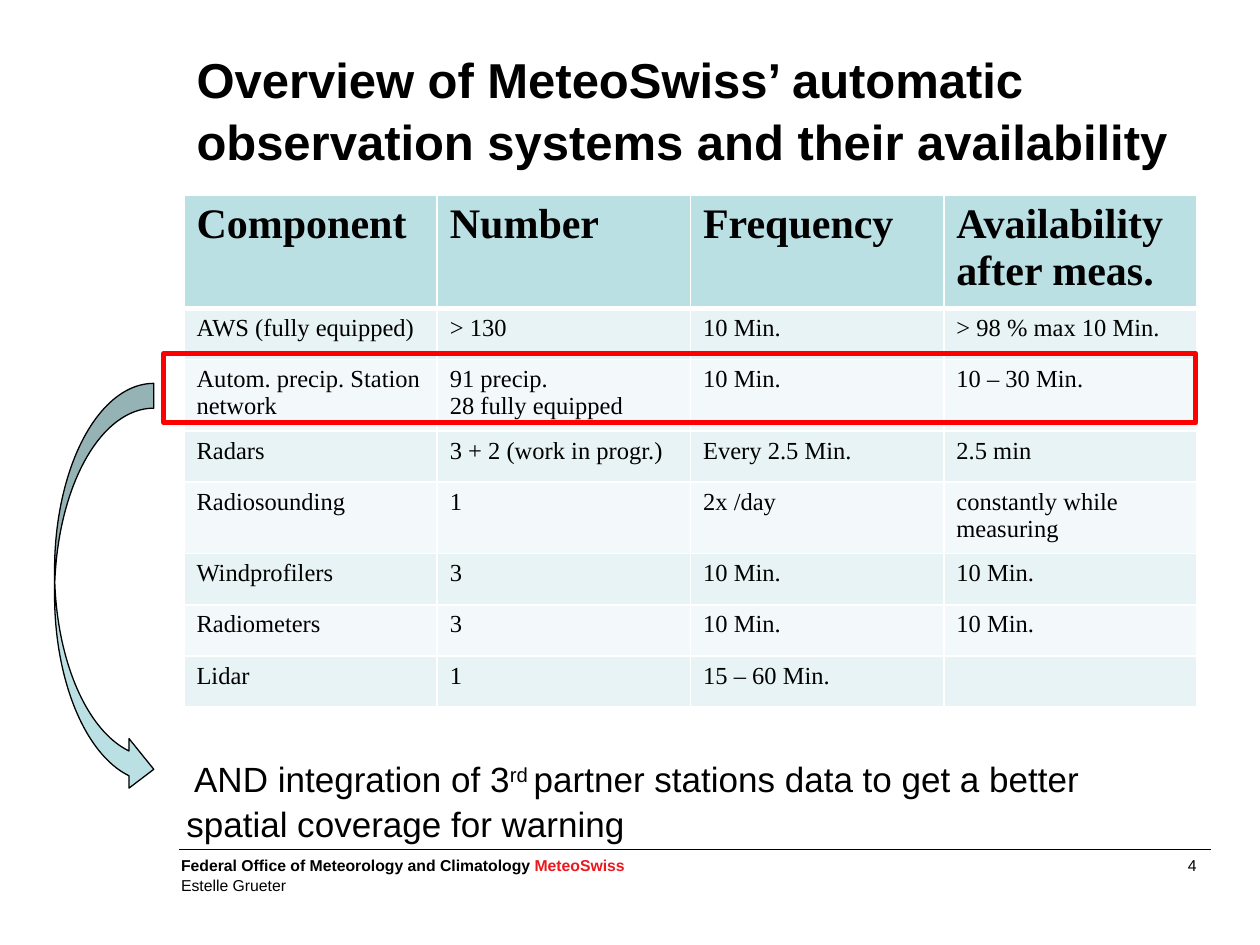
from lxml.etree import SubElement
from pptx import Presentation
from pptx.dml.color import RGBColor
from pptx.enum.shapes import MSO_CONNECTOR as Connector, MSO_SHAPE as Shape
from pptx.enum.text import MSO_ANCHOR as Anchor, MSO_AUTO_SIZE as AutoSize, PP_ALIGN as Align
from pptx.oxml.ns import qn
from pptx.util import Pt

COLORS = {
    "text": "000000",
    "brand": "ED181E",
    "header": "BBE0E3",
    "odd row": "E7F3F4",
    "even row": "F3F9FA",
    "grid": "FFFFFF",
    "highlight": "FF0000",
}

HEADINGS = ["Component", "Number", "Frequency", "Availability after meas."]
SYSTEMS = [
    ["AWS (fully equipped)", "> 130", "10 Min.", "> 98 % max 10 Min."],
    ["Autom. precip. Station network", "91 precip.\n28 fully equipped", "10 Min.", "10 – 30 Min."],
    ["Radars", "3 + 2 (work in progr.)", "Every 2.5 Min.", "2.5 min"],
    ["Radiosounding", "1", "2x /day", "constantly while measuring"],
    ["Windprofilers", "3", "10 Min.", "10 Min."],
    ["Radiometers", "3", "10 Min.", "10 Min."],
    ["Lidar", "1", "15 – 60 Min.", ""],
]


def rgb(name):
    return RGBColor.from_string(COLORS[name])


def write(paragraph, text, size=14, font="Arial", color="text", bold=False,
          raised=False, align=Align.LEFT, spacing=None):
    """Append one formatted run to a paragraph."""
    paragraph.alignment = align
    if spacing:
        paragraph.line_spacing = spacing
    run = paragraph.add_run()
    run.text = text
    run.font.size = Pt(size)
    run.font.name = font
    run.font.bold = bold
    run.font.color.rgb = rgb(color)
    if raised:
        run.font._element.set("baseline", "30000")


def place(shape, left, top, width, height):
    shape.left, shape.top, shape.width, shape.height = map(Pt, (left, top, width, height))


def add_title(slide, text):
    title = slide.shapes.title
    place(title, 105.1, 21.6, 579, 90)
    frame = title.text_frame
    frame.auto_size = AutoSize.NONE
    frame.vertical_anchor = Anchor.TOP
    frame.margin_top = Pt(5)
    write(frame.paragraphs[0], text, size=28, bold=True, spacing=1.05)


def add_text_box(slide, left, top, width, height, inset=True):
    """Add a wrapping text box and return its first paragraph."""
    frame = slide.shapes.add_textbox(*map(Pt, (left, top, width, height))).text_frame
    frame.word_wrap = True
    if not inset:
        frame.margin_left = frame.margin_right = frame.margin_top = frame.margin_bottom = 0
    return frame.paragraphs[0]


def set_borders(cell, bottom):
    properties = cell._tc.get_or_add_tcPr()
    fill_at = 0
    for side, width in (("lnL", 1), ("lnR", 1), ("lnT", 1), ("lnB", bottom)):
        line = SubElement(properties, qn(f"a:{side}"), w=str(Pt(width)))
        solid = SubElement(line, qn("a:solidFill"))
        SubElement(solid, qn("a:srgbClr"), val=COLORS["grid"])
        properties.insert(fill_at, line)
        fill_at += 1


def add_systems_table(slide):
    rows = [HEADINGS] + SYSTEMS
    frame = slide.shapes.add_table(len(rows), len(HEADINGS), Pt(105.1), Pt(111.5), Pt(579), Pt(233.6))
    table = frame.table
    for row_number, texts in enumerate(rows):
        header = row_number == 0
        fill = "header" if header else "odd row" if row_number % 2 else "even row"
        table.rows[row_number].height = Pt(29.2)
        for column, text in enumerate(texts):
            cell = table.cell(row_number, column)
            cell.fill.solid()
            cell.fill.fore_color.rgb = rgb(fill)
            set_borders(cell, bottom=3 if header else 1)
            frame = cell.text_frame
            for number, line in enumerate(text.split("\n")):
                paragraph = frame.add_paragraph() if number else frame.paragraphs[0]
                write(paragraph, line, size=24 if header else 14,
                      font="Times New Roman", bold=header)


def add_outlined(slide, kind, left, top, width, height, line, weight, fill=None):
    shape = slide.shapes.add_shape(kind, *map(Pt, (left, top, width, height)))
    shape.shadow.inherit = False
    if fill:
        shape.fill.solid()
        shape.fill.fore_color.rgb = rgb(fill)
    else:
        shape.fill.background()
    shape.line.color.rgb = rgb(line)
    shape.line.width = Pt(weight)


def add_rule(slide, left, right, y):
    rule = slide.shapes.add_connector(Connector.STRAIGHT, Pt(left), Pt(y), Pt(right), Pt(y))
    rule.line.color.rgb = rgb("text")
    rule.line.width = Pt(0.75)
    SubElement(rule._element.spPr, qn("a:effectLst"))


def add_footer(slide):
    add_rule(slide, 102.2, 691.9, 485.3)
    office = add_text_box(slide, 103.5, 488.7, 560, 23, inset=False)
    write(office, "Federal Office of Meteorology and Climatology ", size=9, bold=True, spacing=1.05)
    write(office, "MeteoSwiss", size=9, color="brand", bold=True, spacing=1.05)
    office.add_line_break()
    write(office, "Estelle Grueter", size=9, spacing=1.05)
    page = add_text_box(slide, 507.6, 488.7, 178.6, 11.5, inset=False)
    write(page, "4 ", size=9, align=Align.RIGHT, spacing=1.05)


def main():
    deck = Presentation()
    deck.slide_width, deck.slide_height = Pt(720), Pt(540)
    slide = deck.slides.add_slide(deck.slide_layouts[5])

    add_footer(slide)
    add_title(slide, "Overview of MeteoSwiss’ automatic observation systems and their availability")
    add_systems_table(slide)

    # Remark on partner stations
    remark = add_text_box(slide, 99.4, 428.4, 584, 55.4)
    write(remark, " AND integration of 3", size=20, spacing=1.05)
    write(remark, "rd ", size=20, raised=True, spacing=1.05)
    write(remark, "partner stations data to get a better spatial coverage for warning",
          size=20, spacing=1.05)

    # Highlighted row and the arrow from it to the remark
    add_outlined(slide, Shape.RECTANGLE, 93.6, 202, 589.7, 39.6, "highlight", 3)
    add_outlined(slide, Shape.CURVED_RIGHT_ARROW, 31.2, 219.1, 56.7, 234.7,
                 "text", 0.75, fill="header")

    deck.save("out.pptx")


if __name__ == "__main__":
    main()
